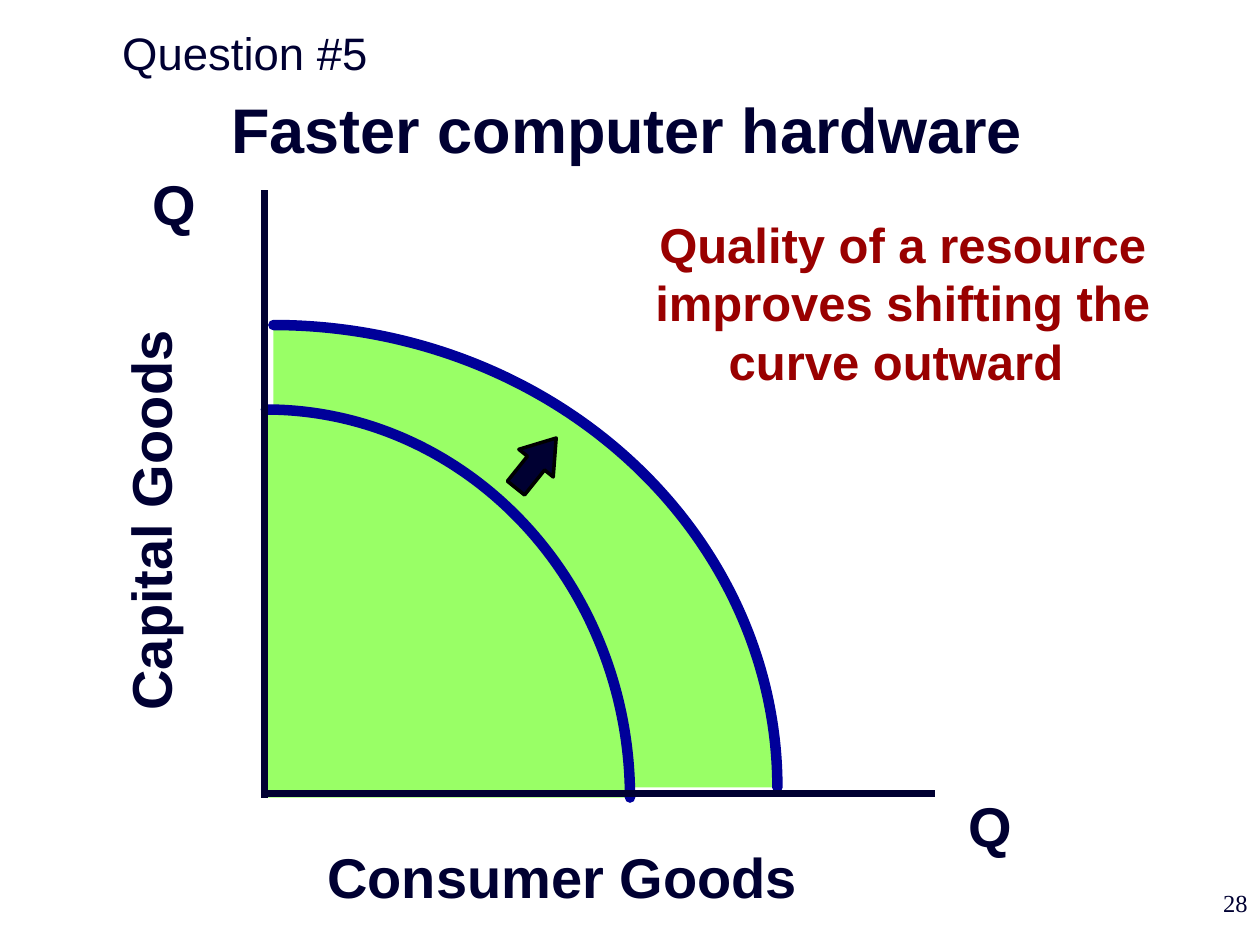
"""Build a slide showing a production possibilities curve shifting outward."""
from dataclasses import dataclass

from lxml import etree
from pptx import Presentation
from pptx.dml.color import RGBColor
from pptx.enum.shapes import MSO_CONNECTOR, MSO_SHAPE
from pptx.enum.text import MSO_ANCHOR, MSO_AUTO_SIZE, PP_ALIGN
from pptx.oxml import parse_xml
from pptx.oxml.ns import nsdecls, qn
from pptx.util import Inches, Pt

LEFT, CENTER, RIGHT = PP_ALIGN.LEFT, PP_ALIGN.CENTER, PP_ALIGN.RIGHT
TOP = MSO_ANCHOR.TOP
NO_AUTOFIT = MSO_AUTO_SIZE.NONE
STRAIGHT = MSO_CONNECTOR.STRAIGHT
RIGHT_ARROW = MSO_SHAPE.RIGHT_ARROW
TITLE_ONLY = 5

NAVY, BLUE, GREEN, RED, BLACK = "000032", "000099", "99FF66", "990000", "000000"


@dataclass
class Label:
    text: str
    left: float
    top: float
    width: float
    height: float
    size: int = 32
    color: str = NAVY
    bold: bool = True
    align: PP_ALIGN = CENTER
    wrap: bool = False
    rotation: float = 0
    font: str = "Arial"


@dataclass
class Curve:
    left: float
    top: float
    width: float
    height: float


@dataclass
class Axis:
    start: tuple[float, float]
    end: tuple[float, float]


TITLE = Label("Faster computer hardware", 0.83, 0.74, 8.29, 0.64, size=36, wrap=True)
CURVES = [Curve(2.17, 2.58, 4, 3.67), Curve(2.11, 3.25, 2.89, 3.08)]
AXES = [Axis((2.1, 1.51), (2.1, 6.33)), Axis((2.09, 6.3), (7.42, 6.3))]
LABELS = [
    Label("Q", 1.11, 1.3, 0.54, 0.63, align=LEFT),
    Label("Q", 7.59, 6.23, 0.54, 0.63, align=LEFT),
    Label("Capital Goods", -0.49, 3.81, 3.36, 0.64, rotation=270),
    Label("Consumer Goods", 2.41, 6.64, 4.11, 0.64),
    Label("28", 7.92, 7, 2.08, 0.5, size=14, bold=False, align=RIGHT,
          wrap=True, font="Times New Roman"),
    Label("Quality of a resource improves shifting the curve outward ",
          4.75, 1.65, 4.83, 1.51, size=28, color=RED, wrap=True),
    Label("Question #5", -1.93, 0.15, 7.75, 0.54, size=26, bold=False, wrap=True),
]


def rgb(color: str) -> RGBColor:
    """Turn a hex string into a colour."""
    return RGBColor.from_string(color)


def style_shape(shape, fill: str, line: str, width: float) -> None:
    """Give a shape a solid fill and outline without a shadow."""
    shape.shadow.inherit = False
    shape.fill.solid()
    shape.fill.fore_color.rgb = rgb(fill)
    shape.line.color.rgb = rgb(line)
    shape.line.width = Pt(width)


def fill_label(box, label: Label) -> None:
    """Place a text shape and write its label."""
    box.left, box.top = Inches(label.left), Inches(label.top)
    box.width, box.height = Inches(label.width), Inches(label.height)
    box.rotation = label.rotation
    frame = box.text_frame
    frame.text = label.text
    frame.word_wrap = label.wrap
    frame.auto_size = NO_AUTOFIT
    frame.vertical_anchor = TOP
    paragraph = frame.paragraphs[0]
    paragraph.alignment = label.align
    font = paragraph.runs[0].font
    font.name, font.size, font.bold = label.font, Pt(label.size), label.bold
    font.color.rgb = rgb(label.color)


def add_label(page, label: Label) -> None:
    """Add a text box for a label."""
    box = page.shapes.add_textbox(0, 0, Inches(label.width), Inches(label.height))
    fill_label(box, label)


def add_curve(page, curve: Curve) -> None:
    """Add a filled quarter ellipse outlined only along its arc."""
    left, top = Inches(curve.left), Inches(curve.top)
    width, height = Inches(curve.width), Inches(curve.height)
    builder = page.shapes.build_freeform(left, top)
    builder.add_line_segments([(left + width, top + height), (left, top + height)])
    shape = builder.convert_to_shape()
    style_shape(shape, GREEN, BLUE, 6)
    shape.line._get_or_add_ln().set("cap", "rnd")
    arc = (f'<a:moveTo><a:pt x="0" y="0"/></a:moveTo><a:arcTo wR="{width}" '
           f'hR="{height}" stAng="16200000" swAng="5400000"/>')
    corner = f'<a:lnTo><a:pt x="0" y="{height}"/></a:lnTo><a:close/>'
    paths = shape._element.spPr.find(".//" + qn("a:pathLst"))
    paths.clear()
    for setting, outline in (('stroke="0"', arc + corner), ('fill="none"', arc)):
        paths.append(parse_xml(f'<a:path {nsdecls("a")} w="{width}" h="{height}" '
                               f'{setting}>{outline}</a:path>'))


def add_axis(page, axis: Axis) -> None:
    """Add a straight axis line."""
    points = [Inches(value) for value in axis.start + axis.end]
    line = page.shapes.add_connector(STRAIGHT, *points)
    line.line.color.rgb = rgb(NAVY)
    line.line.width = Pt(4)
    etree.SubElement(line._element.spPr, qn("a:effectLst"))


def add_shift_arrow(page) -> None:
    """Add the arrow pointing from the inner to the outer curve."""
    arrow = page.shapes.add_shape(
        RIGHT_ARROW, Inches(4), Inches(3.5), Inches(0.51), Inches(0.35))
    arrow.adjustments[0] = 0.5
    arrow.adjustments[1] = 0.73
    arrow.rotation = 308.8
    style_shape(arrow, NAVY, BLACK, 2)


def main() -> None:
    """Build and save the deck."""
    deck = Presentation()
    deck.slide_width, deck.slide_height = Inches(10), Inches(7.5)
    page = deck.slides.add_slide(deck.slide_layouts[TITLE_ONLY])
    fill_label(page.shapes.title, TITLE)
    page.shapes.title.text_frame.paragraphs[0].line_spacing = 0.9
    for curve in CURVES:
        add_curve(page, curve)
    for axis in AXES:
        add_axis(page, axis)
    add_shift_arrow(page)
    for label in LABELS:
        add_label(page, label)
    deck.save("out.pptx")


if __name__ == "__main__":
    main()
